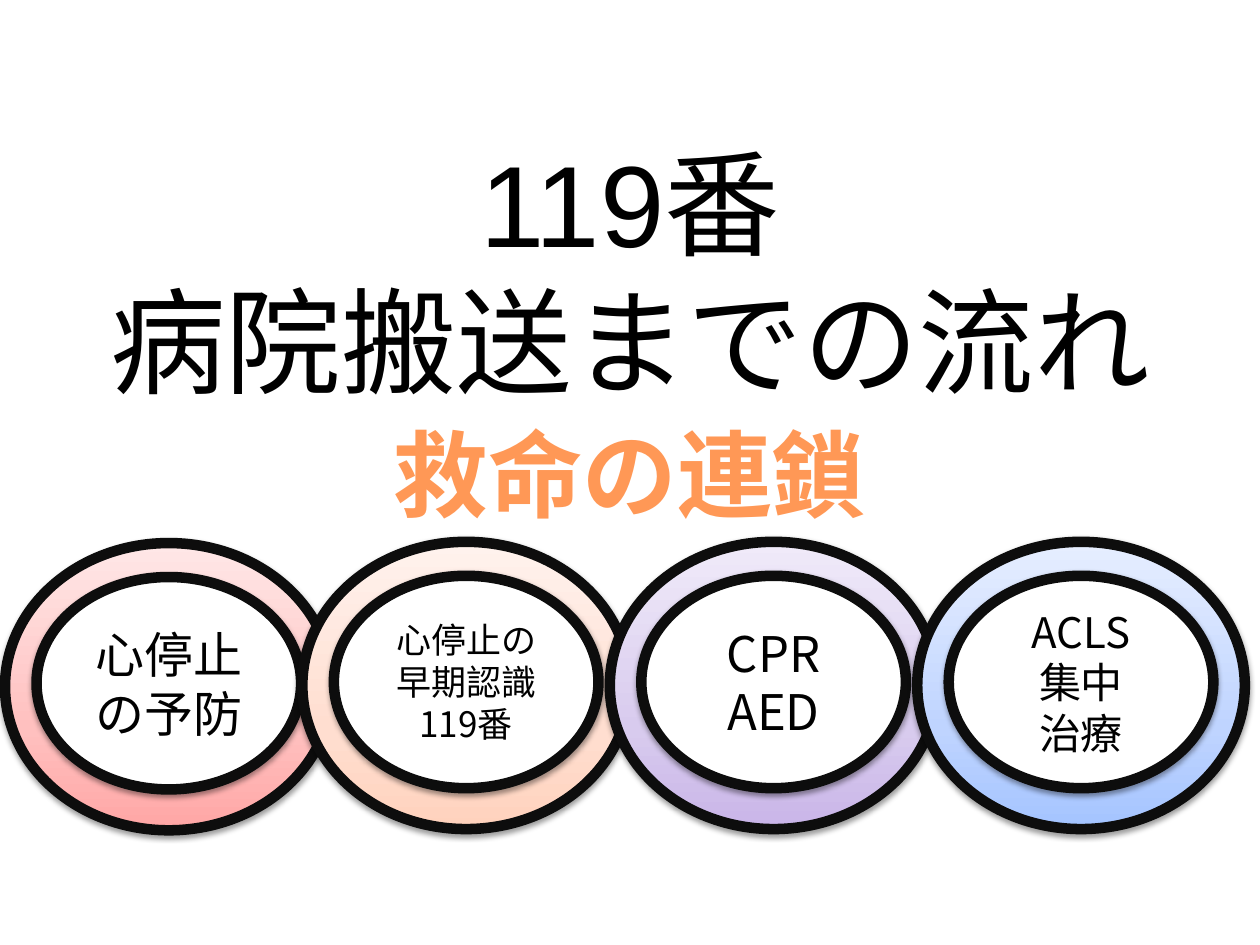
from dataclasses import dataclass

from lxml import etree
from pptx import Presentation
from pptx import util as u
from pptx.dml.color import RGBColor
from pptx.enum import shapes, text
from pptx.oxml.ns import qn


@dataclass(frozen=True)
class Theme:
    """Colours, fonts and type sizes of the slide."""
    ink: str = "000000"
    paper: str = "FFFFFF"
    outline: str = "0D0D0D"
    outline_width: float = 6
    latin: str = "Arial"
    japanese: str = "Noto Sans CJK JP"
    title_size: int = 66
    banner_size: int = 54
    banner: tuple = ((0, "9D4700"), (78, "FF9856"), (100, "FFF5F1"))
    red: tuple = ((0, "FFA6A5"), (35, "FFC0BF"), (100, "FFE7E7"))
    orange: tuple = ((0, "FFD2BD"), (35, "FFDED0"), (100, "FFF2ED"))
    purple: tuple = ((0, "C9B5E8"), (35, "D8CBEE"), (100, "F0EAF9"))
    blue: tuple = ((0, "A4C4FF"), (35, "BFD4FF"), (100, "E6EEFF"))


THEME = Theme()
RING_WIDTH, RING_HEIGHT = 2.6, 2.28
INSET_X, INSET_Y = 0.25, 0.27
LINKS = (
    (0.04, 4.31, THEME.red, ("心停止の予防",), 28),
    (2.4, 4.3, THEME.orange, ("心停止の早期認識119番",), 20),
    (4.84, 4.3, THEME.purple, ("CPR", "AED"), 28),
    (7.28, 4.3, THEME.blue, ("ACLS", "集中", "治療"), 24),
)


def set_all(target, values):
    """Set each named attribute of the target."""
    for name, value in values.items():
        setattr(target, name, value)


def add_colour(parent, colour):
    """Append an RGB colour element and return it."""
    return etree.SubElement(parent, qn("a:srgbClr"), val=colour)


def paint_gradient(fill, holder, stops, angle):
    """Give a fill the listed stops, turning anticlockwise by the angle."""
    fill.gradient()
    fill.gradient_angle = angle
    stop_list = holder.find(".//" + qn("a:gsLst"))
    for old in list(stop_list):
        stop_list.remove(old)
    for share, colour in stops:
        stop = etree.SubElement(stop_list, qn("a:gs"), pos=str(share * 1000))
        add_colour(stop, colour)


def add_shadow(shape):
    """Cast a soft shadow straight down."""
    shape.shadow.inherit = False
    effects = shape._element.spPr.find(qn("a:effectLst"))
    shadow = etree.SubElement(
        effects, qn("a:outerShdw"), blurRad=str(u.Pt(3.1)), dist=str(u.Pt(1.6)),
        dir="5400000", rotWithShape="0")
    etree.SubElement(add_colour(shadow, "000000"), qn("a:alpha"), val="38000")


def write(frame, lines, size, latin, frame_format):
    """Write centred paragraphs and return their spans."""
    set_all(frame, frame_format)
    spans = []
    for index, line in enumerate(lines):
        para = frame.paragraphs[0] if index == 0 else frame.add_paragraph()
        para.text = line
        para.alignment = text.PP_ALIGN.CENTER
        for span in para.runs:
            set_all(span.font, {"size": u.Pt(size), "name": latin})
            span.font.color.rgb = RGBColor.from_string(THEME.ink)
            east_asian = etree.Element(qn("a:ea"), typeface=THEME.japanese)
            span.font._element.find(qn("a:latin")).addnext(east_asian)
            spans.append(span)
    return spans


def add_ellipse(page, box):
    """Add an outlined, shadowed ellipse in the box."""
    shape = page.shapes.add_shape(shapes.MSO_SHAPE.OVAL, *map(u.Inches, box))
    shape.line.color.rgb = RGBColor.from_string(THEME.outline)
    shape.line.width = u.Pt(THEME.outline_width)
    add_shadow(shape)
    return shape


def add_title(page, box):
    """Place the two-line title."""
    shape = page.shapes.add_textbox(*map(u.Inches, box))
    write(shape.text_frame, ["119番\v病院搬送までの流れ"], THEME.title_size, THEME.latin,
          {"word_wrap": True, "vertical_anchor": text.MSO_ANCHOR.MIDDLE})


def add_banner(page, box):
    """Place the bold gradient heading above the chain."""
    shape = page.shapes.add_textbox(*map(u.Inches, box))
    spans = write(shape.text_frame, ["救命の連鎖"], THEME.banner_size, THEME.latin,
                  {"word_wrap": False, "auto_size": text.MSO_AUTO_SIZE.SHAPE_TO_FIT_TEXT})
    for span in spans:
        span.font.bold = True
        paint_gradient(span.font.fill, span.font._element, THEME.banner, 270)


def add_link(page, box, stops, lines, size):
    """Place one link of the chain: a gradient ring around a white label."""
    left, top, width, height = box
    ring = add_ellipse(page, box)
    paint_gradient(ring.fill, ring._element.spPr, stops, 90)
    label = add_ellipse(page, (left + INSET_X, top + INSET_Y,
                               width - 2 * INSET_X, height - 2.2 * INSET_Y))
    label.fill.solid()
    label.fill.fore_color.rgb = RGBColor.from_string(THEME.paper)
    write(label.text_frame, lines, size, THEME.japanese,
          {"word_wrap": True, "vertical_anchor": text.MSO_ANCHOR.MIDDLE})


def main():
    """Build and save the slide."""
    deck = Presentation()
    set_all(deck, {"slide_width": u.Inches(10), "slide_height": u.Inches(7.5)})
    page = deck.slides.add_slide(deck.slide_layouts[6])
    add_title(page, (0.75, 0.99, 8.5, 2.31))
    for left, top, stops, lines, size in LINKS:
        add_link(page, (left, top, RING_WIDTH, RING_HEIGHT), stops, lines, size)
    add_banner(page, (2.98, 3.25, 4.04, 1.01))
    deck.save("out.pptx")


if __name__ == "__main__":
    main()
